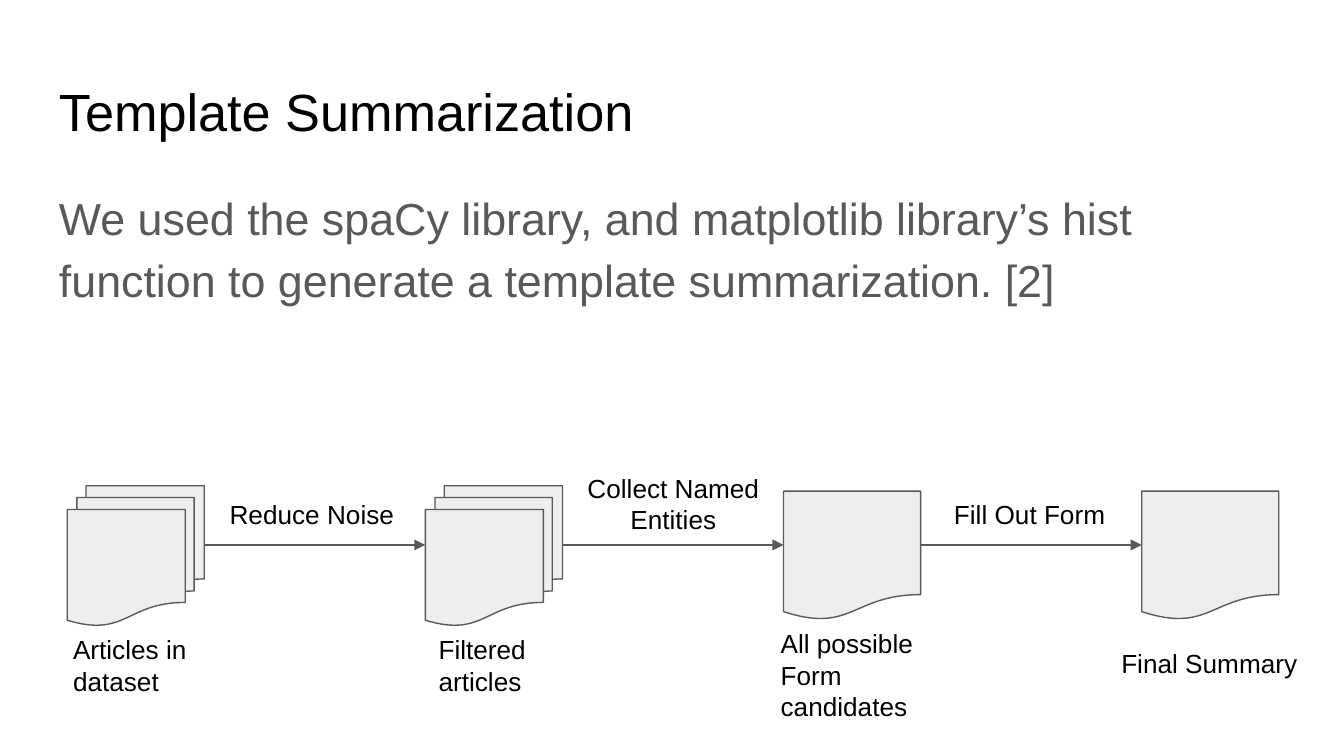
"""Build the Template Summarization slide with its four-stage document flow."""
from dataclasses import dataclass
from itertools import pairwise

from lxml.etree import SubElement
from pptx import Presentation
from pptx.dml.color import RGBColor
from pptx.enum.shapes import MSO_CONNECTOR, MSO_SHAPE
from pptx.enum.text import MSO_ANCHOR, PP_ALIGN
from pptx.oxml.ns import qn
from pptx.slide import Slide
from pptx.util import Emu, Pt

PX = 4572
PAGE_WIDTH, PAGE_HEIGHT = 2000, 1125
FIRST_LEFT, PITCH, DOCUMENT_WIDTH, ARROW_Y = 100, 533, 204, 811
INSET = 20


@dataclass(frozen=True)
class Theme:
    font: str = "Arial"
    ink: RGBColor = RGBColor(0x00, 0x00, 0x00)
    gray: RGBColor = RGBColor(0x59, 0x59, 0x59)
    paper: RGBColor = RGBColor(0xEE, 0xEE, 0xEE)
    title_size: int = 28
    body_size: int = 24
    label_size: int = 14
    line_width: float = 0.75


THEME = Theme()


@dataclass(frozen=True)
class Label:
    text: str
    left: int
    top: int
    width: int
    height: int
    size: int = THEME.label_size
    color: RGBColor = THEME.ink
    align: PP_ALIGN = PP_ALIGN.LEFT
    spacing: float = 1.0


@dataclass(frozen=True)
class Stage:
    kind: MSO_SHAPE
    top: int
    height: int


STACK = Stage(MSO_SHAPE.FLOWCHART_MULTIDOCUMENT, 723, 208)
SINGLE = Stage(MSO_SHAPE.FLOWCHART_DOCUMENT, 731, 192)
STAGES = [STACK, STACK, SINGLE, SINGLE]

LABELS = [
    Label("Template Summarization", 68, 98, 1864, 126, THEME.title_size),
    Label(
        "We used the spaCy library, and matplotlib library’s hist "
        "function to generate a template summarization. [2]",
        68, 252, 1864, 748, THEME.body_size, THEME.gray, spacing=1.15,
    ),
    Label("Articles in dataset", 89, 923, 284, 126),
    Label("Reduce Noise", 322, 724, 330, 38),
    Label("Filtered articles", 633, 923, 204, 66),
    Label("Collect Named Entities", 837, 685, 330, 38, align=PP_ALIGN.CENTER),
    Label("All possible Form candidates", 1142, 914, 324, 84),
    Label("Fill Out Form", 1400, 724, 272, 38),
    Label("Final Summary", 1649, 944, 308, 84),
]


def px(*lengths: int) -> list[Emu]:
    """Turn px lengths into EMU."""
    return [Emu(length * PX) for length in lengths]


def set_values(target: object, values: dict[str, object]) -> None:
    """Set each named attribute of the target."""
    for name, value in values.items():
        setattr(target, name, value)


def add_label(slide: Slide, label: Label) -> None:
    """Add one wrapped text box."""
    box = slide.shapes.add_textbox(*px(label.left, label.top, label.width, label.height))
    frame = box.text_frame
    inset = Emu(INSET * PX)
    set_values(frame, {
        "word_wrap": True, "vertical_anchor": MSO_ANCHOR.TOP,
        "margin_left": inset, "margin_right": inset,
        "margin_top": inset, "margin_bottom": inset,
    })
    para = frame.paragraphs[0]
    set_values(para, {"alignment": label.align, "line_spacing": label.spacing})
    span = para.add_run()
    span.text = label.text
    set_values(span.font, {"name": THEME.font, "size": Pt(label.size)})
    span.font.color.rgb = label.color


def add_stage(slide: Slide, stage: Stage, left: int) -> None:
    """Add one document shape."""
    document = slide.shapes.add_shape(
        stage.kind, *px(left, stage.top, DOCUMENT_WIDTH, stage.height)
    )
    document.shadow.inherit = False
    document.fill.solid()
    document.fill.fore_color.rgb = THEME.paper
    document.line.color.rgb = THEME.gray
    document.line.width = Pt(THEME.line_width)


def add_arrow(slide: Slide, start: int, end: int) -> None:
    """Add one horizontal arrow between two stages."""
    arrow = slide.shapes.add_connector(
        MSO_CONNECTOR.STRAIGHT, *px(start, ARROW_Y, end, ARROW_Y)
    )
    arrow.line.color.rgb = THEME.gray
    arrow.line.width = Pt(THEME.line_width)
    properties = arrow.line._get_or_add_ln()
    SubElement(properties, qn("a:tailEnd"), type="triangle", w="med", len="med")
    SubElement(properties.getparent(), qn("a:effectLst"))


def main() -> None:
    """Build and save the deck."""
    deck = Presentation()
    deck.slide_width, deck.slide_height = px(PAGE_WIDTH, PAGE_HEIGHT)
    page = deck.slides.add_slide(deck.slide_layouts[6])
    lefts = [FIRST_LEFT + PITCH * index for index in range(len(STAGES))]
    for stage, left in zip(STAGES, lefts):
        add_stage(page, stage, left)
    for left, following in pairwise(lefts):
        add_arrow(page, left + DOCUMENT_WIDTH, following)
    for label in LABELS:
        add_label(page, label)
    deck.save("out.pptx")


if __name__ == "__main__":
    main()
